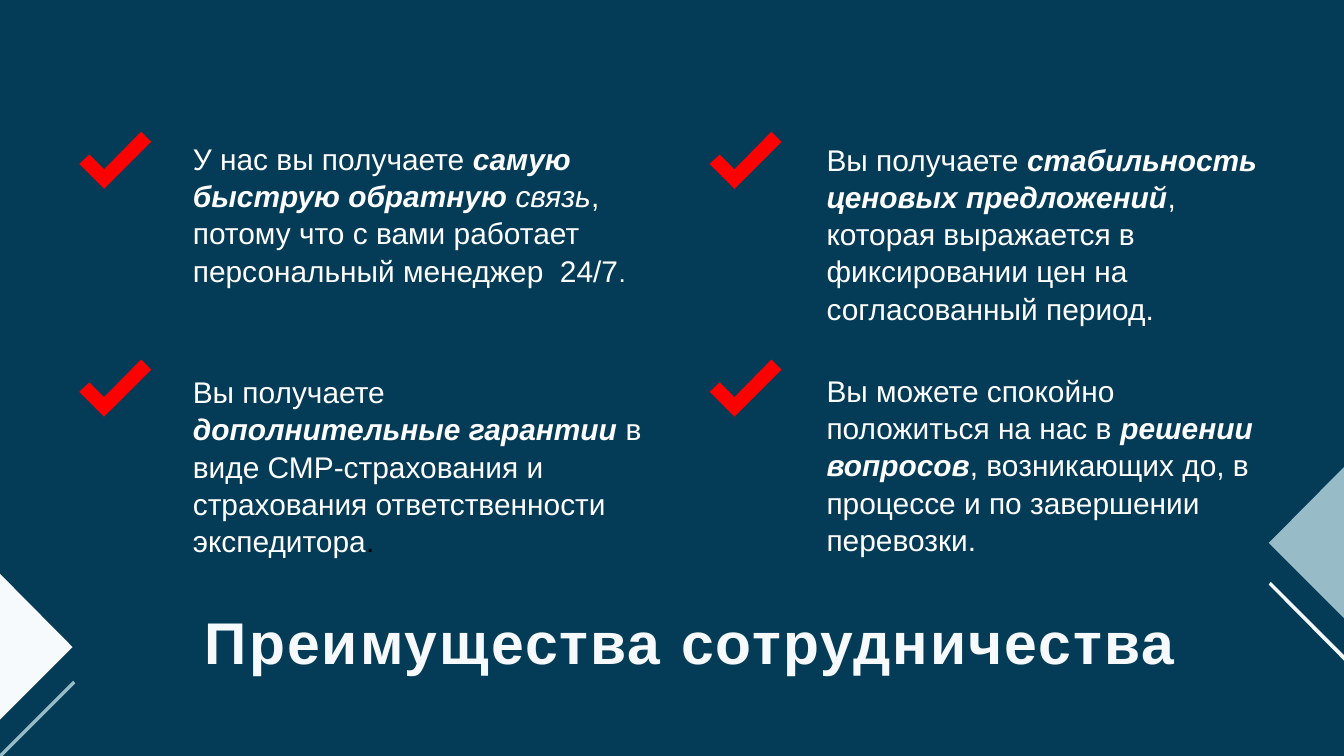
"""Build the slide on the advantages of cooperation."""
from pptx import Presentation
from pptx.dml.color import RGBColor
from pptx.util import Pt

PX = 9144
NAVY = RGBColor(0x04, 0x3C, 0x57)
RED = RGBColor(0xFF, 0x00, 0x00)
WHITE = RGBColor(0xFF, 0xFF, 0xFF)
BLACK = RGBColor(0x00, 0x00, 0x00)
PALE = RGBColor(0xF7, 0xFA, 0xFD)
STEEL = RGBColor(0x97, 0xBC, 0xC7)

prs = Presentation()
prs.slide_width = 2000 * PX
prs.slide_height = 1125 * PX
s = prs.slides.add_slide(prs.slide_layouts[6])
s.background.fill.solid()
s.background.fill.fore_color.rgb = NAVY


def add_outline(points, color):
    fb = s.shapes.build_freeform(*points[0], scale=PX)
    fb.add_line_segments(points[1:])
    sp = fb.convert_to_shape()
    sp.shadow.inherit = False
    sp.fill.solid()
    sp.fill.fore_color.rgb = color
    sp.line.fill.background()


def add_text(x, y, w, h, inset, size, color, before, runs):
    tf = s.shapes.add_textbox(x * PX, y * PX, w * PX, h * PX).text_frame
    tf.word_wrap = True
    tf.margin_left = tf.margin_right = tf.margin_bottom = 0
    tf.margin_top = inset * PX
    p = tf.paragraphs[0]
    p.space_before = Pt(before)
    p.font.name = "Arial"
    p.font.size = Pt(size)
    p.font.color.rgb = color
    for text, bold, italic in runs:
        r = p.add_run()
        r.text = text
        r.font.bold = bold
        r.font.italic = italic
    return p


p = add_text(305, 899, 1557, 108, 2, 63, PALE, 1.1,
             [("Преимущества сотрудничества", True, False)])
p.runs[0].font._element.set("spc", "220")

CHECK = [(0, 48), (15, 34), (37, 56), (92, 0), (107, 15), (37, 85)]
for left in (118, 1056):
    for top in (196, 535):
        add_outline([(left + x, top + y) for x, y in CHECK], RED)

benefits = [
    (287, 206, 671, 217, 0, [
        ("У нас вы получаете ", False, False),
        ("самую быструю обратную ", True, True),
        ("связь", False, True),
        (", потому что с вами работает персональный менеджер  24/7", False, False),
        (".", False, False)]),
    (1230, 207, 658, 317, 1, [
        ("Вы получаете ", False, False),
        ("стабильность ценовых предложений", True, True),
        (", которая выражается в фиксировании цен на согласованный период.", False, False)]),
    (1230, 551, 658, 316, 0.9, [
        ("Вы можете спокойно положиться на нас в ", False, False),
        ("решении вопросов", True, True),
        (", возникающих до, в процессе и по завершении перевозки.", False, False)]),
    (287, 553, 696, 217, 0, [
        ("Вы получаете ", False, False),
        ("дополнительные гарантии ", True, True),
        ("в виде СМР-страхования и страхования ответственности экспедитора", False, False),
        (".", False, False)]),
]
paragraphs = []
for x, y, w, h, before, runs in benefits:
    p = add_text(x, y, w, h, 1, 32, WHITE, before, runs)
    p.line_spacing = 1.04
    paragraphs.append(p)
paragraphs[0].runs[-1].font.size = Pt(28)
paragraphs[3].runs[-1].font.color.rgb = BLACK

add_outline([(108, 963), (0, 1071), (0, 854)], PALE)
add_outline([(2000, 920), (1888, 808), (2000, 695)], STEEL)
add_outline([(112, 1017), (4, 1125), (0, 1125), (0, 1122), (109, 1013)], STEEL)
add_outline([(2000, 983), (1888, 870), (1891, 866), (2000, 975)], PALE)

prs.save("out.pptx")
